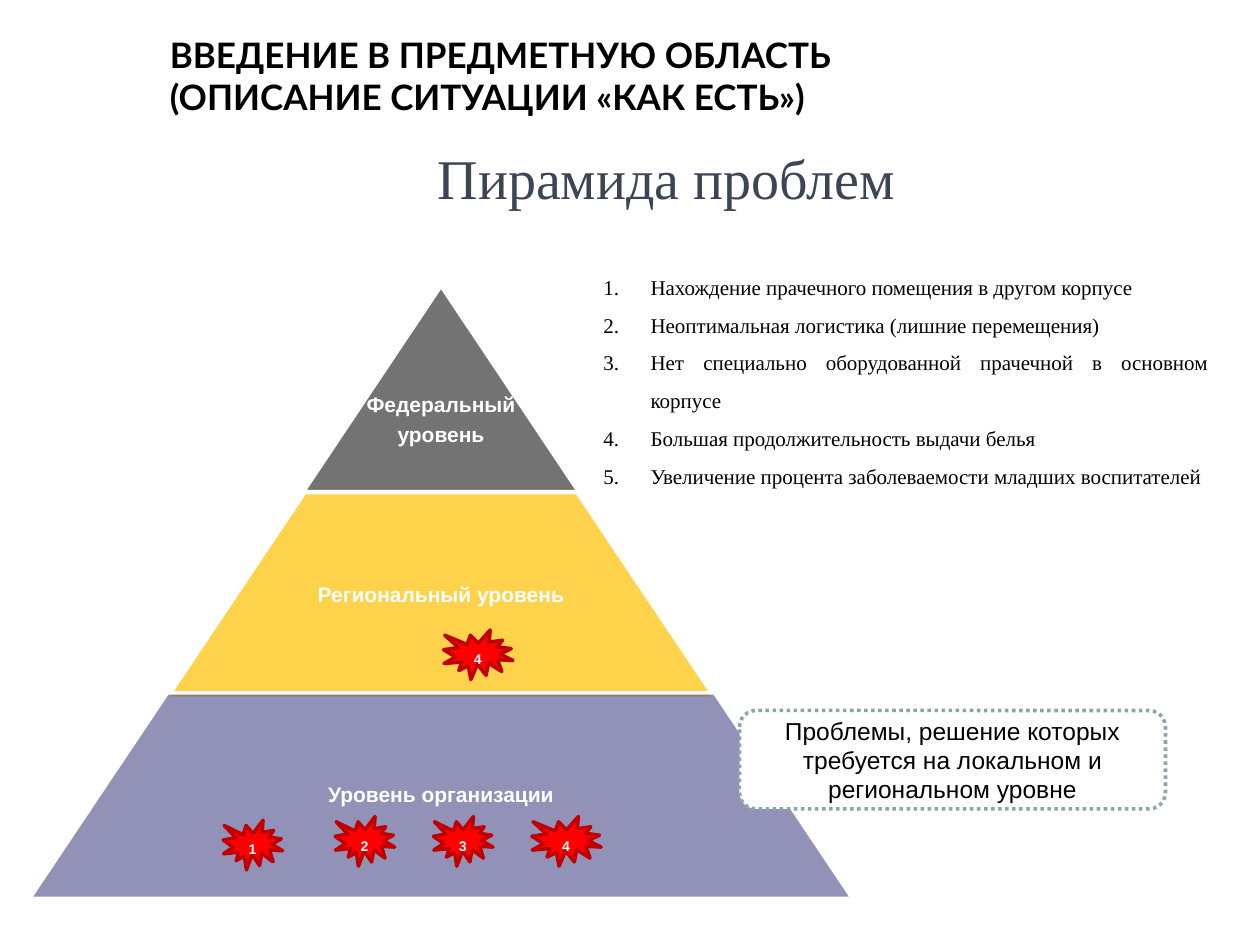
from lxml import etree
from pptx import Presentation
from pptx.dml.color import RGBColor
from pptx.enum.dml import MSO_LINE
from pptx.enum.shapes import MSO_SHAPE
from pptx.enum.text import MSO_ANCHOR, MSO_AUTO_SIZE, PP_ALIGN
from pptx.oxml.ns import qn
from pptx.util import Pt

LEFT, CENTER, JUSTIFY = PP_ALIGN.LEFT, PP_ALIGN.CENTER, PP_ALIGN.JUSTIFY
TOP, MIDDLE = MSO_ANCHOR.TOP, MSO_ANCHOR.MIDDLE
NO_AUTOFIT = MSO_AUTO_SIZE.NONE
TRAPEZOID, ROUNDED = MSO_SHAPE.TRAPEZOID, MSO_SHAPE.ROUNDED_RECTANGLE
BURST = MSO_SHAPE.EXPLOSION1
SYSTEM_DOT = MSO_LINE.ROUND_DOT

PYRAMID_CENTER = 252
TIER_HEIGHT = 117.4
TIERS = [
    (163.5, 157, "737373", 100, ["Федеральный", "уровень"], 18),
    (281.5, 313, "FFC000", 70, ["Региональный уровень"], 0),
    (396, 470, "262673", 50, ["Уровень организации"], 0),
]
PROBLEMS = [
    "Нахождение прачечного помещения в другом корпусе",
    "Неоптимальная логистика (лишние перемещения)",
    "Нет специально оборудованной прачечной в основном корпусе",
    "Большая продолжительность выдачи белья",
    "Увеличение процента заболеваемости младших воспитателей",
]
MARKERS = [
    ("1", 127.5, 468.7, 34),
    ("2", 191.5, 466.6, 34),
    ("3", 247.7, 466.6, 34),
    ("4", 253.5, 360, 39.6),
    ("4", 303.9, 466.6, 39.6),
]


def color(value):
    return RGBColor.from_string(value)


def write_text(shape, lines, font="Arial", size=12, fill="000000", bold=False,
               align=CENTER, anchor=MIDDLE, wrap=True, spacing=None, after=0,
               inset=None, numbered=False):
    frame = shape.text_frame
    frame.word_wrap = wrap
    frame.auto_size = NO_AUTOFIT
    frame.vertical_anchor = anchor
    if inset is not None:
        frame.margin_left = frame.margin_right = Pt(inset)
        frame.margin_top = frame.margin_bottom = Pt(inset)
    for index, line in enumerate(lines):
        paragraph = frame.add_paragraph() if index else frame.paragraphs[0]
        paragraph.text = line
        paragraph.alignment = align
        paragraph.space_after = Pt(after)
        if spacing:
            paragraph.line_spacing = spacing
        if numbered:
            add_number(paragraph, 27)
        for run in paragraph.runs:
            run.font.name = font
            run.font.size = Pt(size)
            run.font.bold = bold
            run.font.color.rgb = color(fill)


def add_number(paragraph, indent):
    properties = paragraph._p.get_or_add_pPr()
    properties.set("marL", str(Pt(indent)))
    properties.set("indent", str(-Pt(indent)))
    font = etree.SubElement(properties, qn("a:buFont"))
    font.set("typeface", "+mj-lt")
    number = etree.SubElement(properties, qn("a:buAutoNum"))
    number.set("type", "arabicPeriod")


def add_box(slide, left, top, width, height, lines, **text_format):
    box = slide.shapes.add_textbox(Pt(left), Pt(top), Pt(width), Pt(height))
    write_text(box, lines, **text_format)


def add_figure(slide, kind, left, top, width, height, fill, line, opacity=100):
    shape = slide.shapes.add_shape(kind, Pt(left), Pt(top), Pt(width), Pt(height))
    shape.shadow.inherit = False
    shape.fill.solid()
    shape.fill.fore_color.rgb = color(fill)
    shape.line.color.rgb = color(line)
    shape.line.width = Pt(2)
    if opacity < 100:
        fill_color = shape._element.spPr.find(qn("a:solidFill"))[0]
        alpha = etree.SubElement(fill_color, qn("a:alpha"))
        alpha.set("val", str(opacity * 1000))
    return shape


def add_title(slide):
    title = slide.shapes.title
    title.left, title.top = Pt(242), Pt(78.5)
    title.width, title.height = Pt(278), Pt(46)
    write_text(title, ["Пирамида проблем"], font="Times New Roman", size=32,
               fill="3B4555", anchor=TOP, wrap=False)


def add_tier(slide, top, width, fill, opacity, label, label_shift):
    left = PYRAMID_CENTER - width / 2
    tier = add_figure(slide, TRAPEZOID, left, top, width, TIER_HEIGHT,
                      fill, "FFFFFF", opacity)
    tier.adjustments[0] = 0.67
    add_box(slide, PYRAMID_CENTER - 102, top + label_shift, 204, TIER_HEIGHT,
            label, fill="FFFFFF", bold=True, spacing=0.9, after=4.2, inset=1.4)


def add_marker(slide, number, left, top, width):
    marker = add_figure(slide, BURST, left, top, width, 28.4, "FF0000", "C00000")
    write_text(marker, [number], size=8, fill="FFFFFF", bold=True, anchor=TOP)


def add_callout(slide):
    callout = add_figure(slide, ROUNDED, 422.6, 406, 243.4, 56.2,
                         "FFFFFF", "8AA6A8")
    callout.line.dash_style = SYSTEM_DOT
    write_text(callout, ["Проблемы, решение которых требуется на локальном "
                         "и региональном уровне"], size=14)


def main():
    presentation = Presentation()
    presentation.slide_width, presentation.slide_height = Pt(720), Pt(540)
    slide = presentation.slides.add_slide(presentation.slide_layouts[5])
    add_title(slide)
    add_box(slide, 90, 10, 620, 66,
            ["ВВЕДЕНИЕ В ПРЕДМЕТНУЮ ОБЛАСТЬ\v(ОПИСАНИЕ СИТУАЦИИ «КАК ЕСТЬ»)"],
            font="Lato", size=20, bold=True, align=LEFT)
    for tier in TIERS:
        add_tier(slide, *tier)
    add_callout(slide)
    for marker in MARKERS:
        add_marker(slide, *marker)
    add_box(slide, 337.7, 146, 360, 138, PROBLEMS, font="Times New Roman",
            align=JUSTIFY, anchor=TOP, spacing=1.5, numbered=True)
    presentation.save("out.pptx")


if __name__ == "__main__":
    main()
